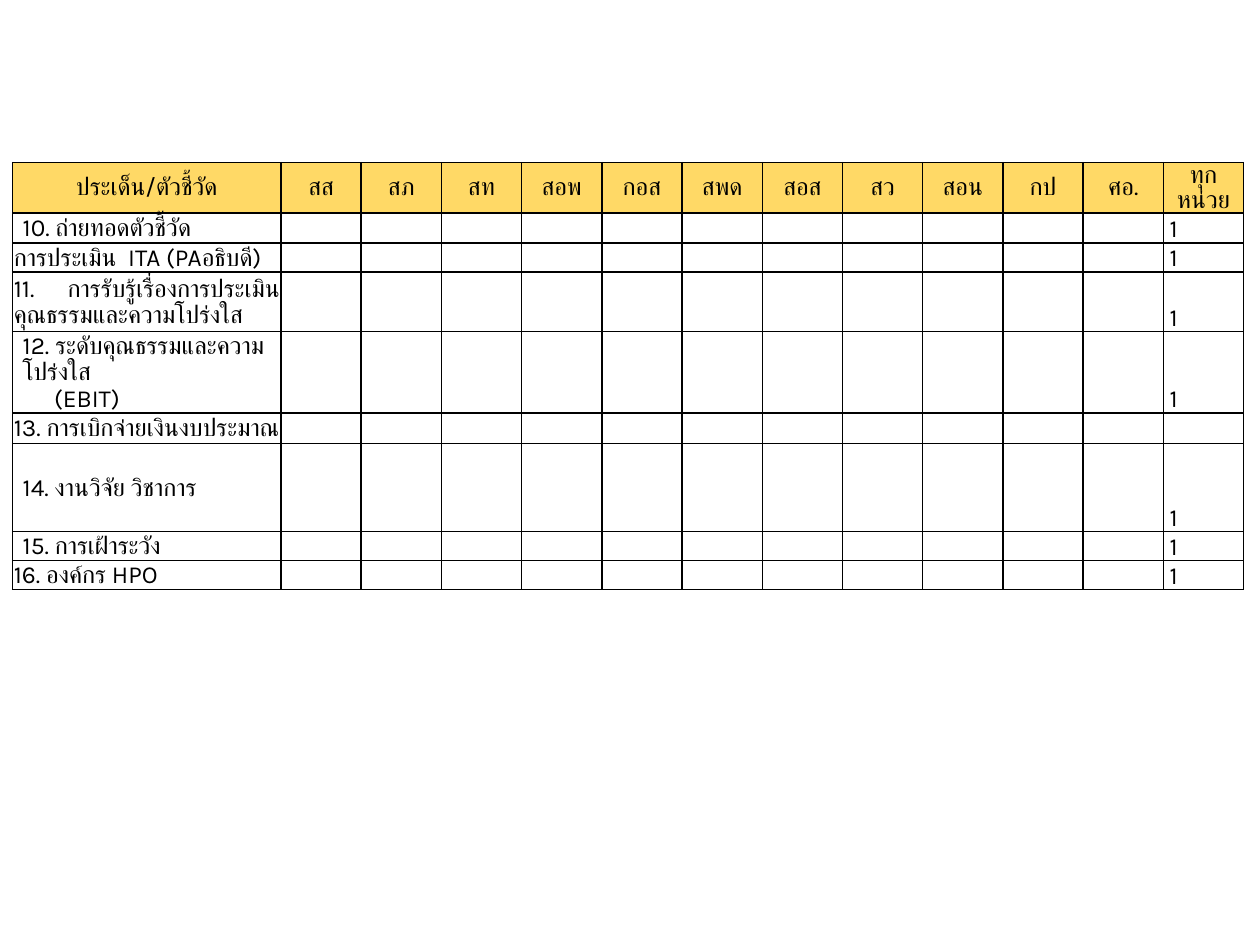
from lxml.etree import SubElement
from pptx import Presentation
from pptx.dml.color import RGBColor
from pptx.enum.text import MSO_ANCHOR, PP_ALIGN
from pptx.oxml.ns import qn
from pptx.util import Inches, Pt

COLORS = {"header": "FFD966", "body": "FFFFFF", "ink": "000000"}
LINE_SPACING = {"header": 0.86, "body": 0.93}
FONT = "Karla"
UNITS = ["สส", "สภ", "สท", "สอพ", "กอส", "สพด", "สอส", "สว", "สอน", "กป", "ศอ.", "ทุกหน่วย"]
HEADERS = ["ประเด็น/ตัวชี้วัด"] + UNITS
FLUSH, INDENTED = 0.01, 0.08
INDICATORS = [
    (["10. ถ่ายทอดตัวชี้วัด"], INDENTED, "1", 0.24),
    (["การประเมิน  ITA (PAอธิบดี)"], FLUSH, "1", 0.23),
    (["11. การรับรู้เรื่องการประเมินคุณธรรมและความโปร่งใส"], FLUSH, "1", 0.47),
    (["12. ระดับคุณธรรมและความโปร่งใส", "(EBIT)"], INDENTED, "1", 0.65),
    (["13. การเบิกจ่ายเงินงบประมาณ"], FLUSH, "", 0.24),
    (["14. งานวิจัย วิชาการ"], INDENTED, "1", 0.7),
    (["15. การเฝ้าระวัง"], INDENTED, "1", 0.23),
    (["16. องค์กร HPO"], FLUSH, "1", 0.23),
]
JUSTIFIED_ROW = 3


def set_borders(cell):
    tcPr = cell._tc.get_or_add_tcPr()
    for i, side in enumerate(("lnL", "lnR", "lnT", "lnB")):
        ln = tcPr.makeelement(qn(f"a:{side}"), {"w": str(Pt(1))})
        fill = SubElement(ln, qn("a:solidFill"))
        SubElement(fill, qn("a:srgbClr"), val=COLORS["ink"])
        tcPr.insert(i, ln)


def write_line(p, text, align, spacing):
    p.alignment = align
    p.line_spacing = spacing
    if not text:
        SubElement(p._p, qn("a:endParaRPr"), sz="1000")
        return
    r = p.add_run()
    r.text = text
    for name, value in {"size": Pt(14), "name": FONT, "bold": False}.items():
        setattr(r.font, name, value)
    r.font.color.rgb = RGBColor.from_string(COLORS["ink"])
    for script in ("ea", "cs"):
        SubElement(r._r.get_or_add_rPr(), qn(f"a:{script}"), typeface=FONT)


def fill_cell(cell, lines, kind, align=PP_ALIGN.LEFT, anchor=MSO_ANCHOR.MIDDLE, left=FLUSH):
    settings = {
        "margin_left": Inches(left),
        "margin_top": Inches(0.01),
        "margin_right": Inches(0.01),
        "margin_bottom": 0,
        "vertical_anchor": anchor,
    }
    for name, value in settings.items():
        setattr(cell, name, value)
    cell.fill.solid()
    cell.fill.fore_color.rgb = RGBColor.from_string(COLORS[kind])
    set_borders(cell)
    tf = cell.text_frame
    for i, line in enumerate(lines):
        p = tf.paragraphs[0] if i == 0 else tf.add_paragraph()
        write_line(p, line, align, LINE_SPACING[kind])
        if i:
            p._p.get_or_add_pPr().set("marL", str(Inches(0.25)))


def add_indicator_table(s, x, y, w):
    heights = [0.4] + [row[-1] for row in INDICATORS]
    frame = s.shapes.add_table(len(heights), len(HEADERS), Inches(x), Inches(y),
                               Inches(w), Inches(sum(heights)))
    table = frame.table
    for flag in ("first_row", "horz_banding"):
        setattr(table, flag, False)
    label_w = 2.13
    unit_w = (w - label_w) / len(UNITS)
    for i, col in enumerate(table.columns):
        col.width = Inches(unit_w if i else label_w)
    for row, height in zip(table.rows, heights):
        row.height = Inches(height)

    for c, header in enumerate(HEADERS):
        fill_cell(table.cell(0, c), [header], "header", PP_ALIGN.CENTER)
    last = len(HEADERS) - 1
    for r, (lines, left, score, _) in enumerate(INDICATORS, 1):
        align = PP_ALIGN.JUSTIFY if r == JUSTIFIED_ROW else PP_ALIGN.LEFT
        fill_cell(table.cell(r, 0), lines, "body", align, left=left)
        for c in range(1, last):
            fill_cell(table.cell(r, c), [""], "body")
        fill_cell(table.cell(r, last), [score], "body", anchor=MSO_ANCHOR.BOTTOM, left=0.05)


def main():
    prs = Presentation()
    prs.slide_width, prs.slide_height = Inches(10), Inches(7.5)
    s = prs.slides.add_slide(prs.slide_layouts[6])
    add_indicator_table(s, 0.1, 1.29, 9.77)
    prs.save("out.pptx")


if __name__ == "__main__":
    main()
